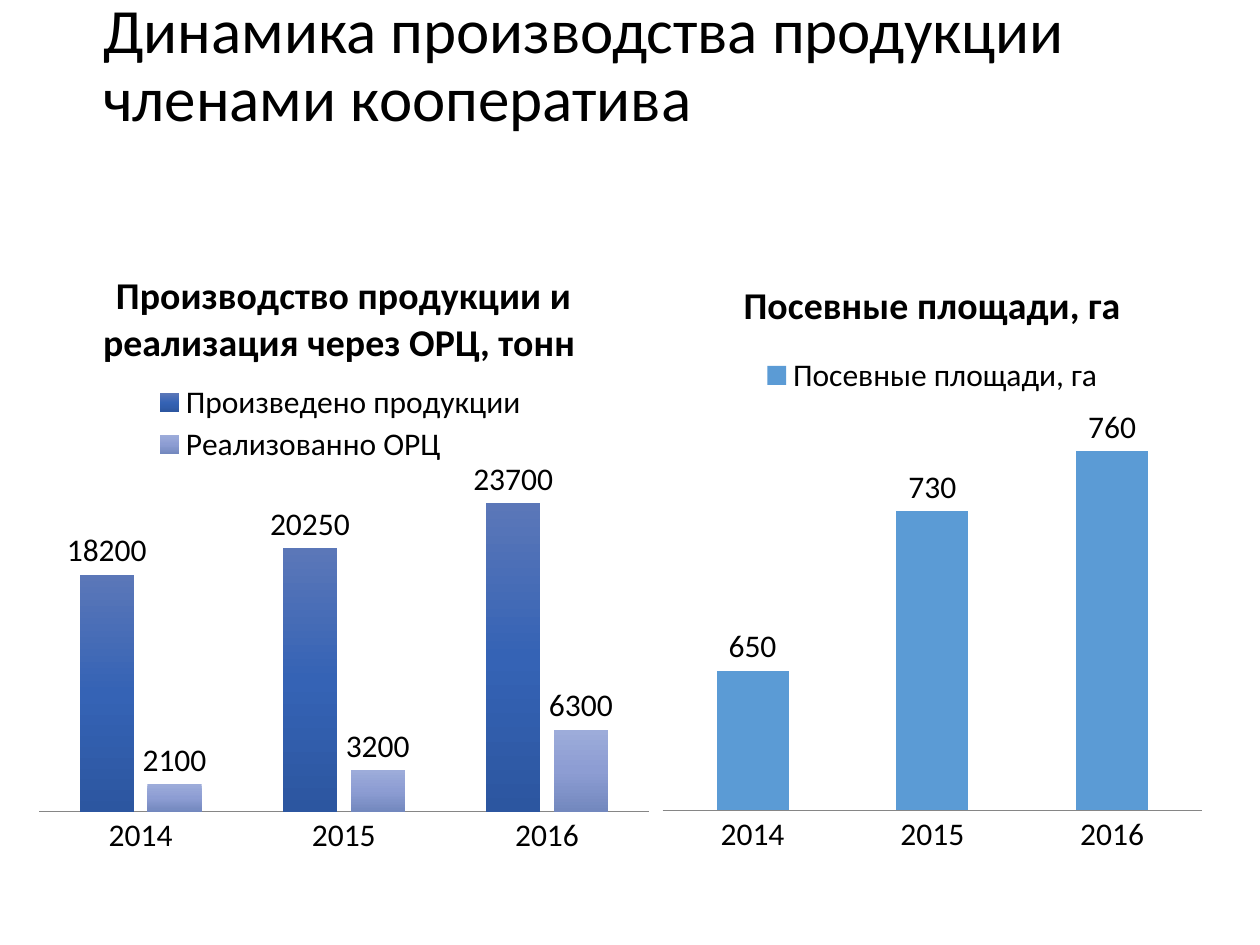
from pptx import Presentation
from pptx.chart.data import CategoryChartData
from pptx.dml.color import RGBColor
from pptx.enum.chart import XL_CHART_TYPE, XL_LABEL_POSITION, XL_LEGEND_POSITION, XL_TICK_MARK
from pptx.enum.text import MSO_ANCHOR
from pptx.oxml import parse_xml
from pptx.oxml.ns import nsdecls
from pptx.util import Inches, Pt

COLUMNS = XL_CHART_TYPE.COLUMN_CLUSTERED
LEGEND_TOP = XL_LEGEND_POSITION.TOP
OUTSIDE_END = XL_LABEL_POSITION.OUTSIDE_END
NO_TICK = XL_TICK_MARK.NONE
MIDDLE = MSO_ANCHOR.MIDDLE

# Content
FONT = "Calibri"
COLORS = {"text": "000000", "axis": "868686", "area": "5B9BD5"}
PRODUCED = ("5B77B8", "3563B5", "2C56A0")
SOLD = ("9DACDA", "8D9DD3", "7388BE")
TITLE = "Динамика производства продукции членами кооператива"
YEARS = ["2014", "2015", "2016"]
# Boxes are in inches; layouts are shares of the chart: x, y, width, height
CHARTS = [
    {
        "title": "Производство продукции и реализация через ОРЦ, тонн ",
        "box": (0.21, 1.92, 5.04, 4.97),
        "plot": (0.02, 0.39, 0.96, 0.52),
        "legend": (0.2, 0.22, 0.6, 0.14),
        "scale": (0, 25000),
        "series": [
            ("Произведено продукции ", (18200, 20250, 23700), PRODUCED),
            ("Реализованно ОРЦ", (2100, 3200, 6300), SOLD),
        ],
    },
    {
        "title": "Посевные площади, га",
        "box": (5.17, 2, 4.46, 4.87),
        "plot": (0.02, 0.26, 0.96, 0.65),
        "legend": (0.19, 0.17, 0.62, 0.06),
        "scale": (580, 780),
        "series": [("Посевные площади, га", (650, 730, 760), (COLORS["area"],))],
    },
]


def style_font(font, size, bold=False):
    font.name, font.size, font.bold = FONT, Pt(size), bold
    font.color.rgb = RGBColor.from_string(COLORS["text"])


def write_text(frame, text, size, bold=False, spacing=None):
    para = frame.paragraphs[0]
    para.line_spacing = spacing
    span = para.add_run()
    span.text = text
    style_font(span.font, size, bold)


def make_layout(shares, inner=False):
    target = '<c:layoutTarget val="inner"/>' if inner else ""
    modes = "".join(f'<c:{side}Mode val="edge"/>' for side in "xy")
    sizes = "".join(f'<c:{key} val="{share}"/>' for key, share in zip("xywh", shares))
    return parse_xml(f'<c:layout {nsdecls("c")}><c:manualLayout>{target}{modes}{sizes}'
                     "</c:manualLayout></c:layout>")


def place(element, layout, after=None):
    for old in element.findall(layout.tag):
        element.remove(old)
    if after is None:
        element.insert(0, layout)
    else:
        after.addnext(layout)


def fill_series(series, stops):
    if len(stops) == 1:
        series.format.fill.solid()
        series.format.fill.fore_color.rgb = RGBColor.from_string(stops[0])
        return
    step = 100000 // (len(stops) - 1)
    marks = "".join(f'<a:gs pos="{index * step}"><a:srgbClr val="{color}"/></a:gs>'
                    for index, color in enumerate(stops))
    properties = series.format.fill._xPr
    properties.append(parse_xml(f'<a:gradFill {nsdecls("a")}><a:gsLst>{marks}</a:gsLst>'
                                '<a:lin ang="5400000" scaled="0"/></a:gradFill>'))


def add_column_chart(page, item):
    data = CategoryChartData()
    data.categories = YEARS
    for name, values, _ in item["series"]:
        data.add_series(name, values)
    chart = page.shapes.add_chart(COLUMNS, *map(Inches, item["box"]), data).chart
    style_font(chart.font, 18)
    write_text(chart.chart_title.text_frame, item["title"], 21.6, bold=True)
    chart.chart_title.include_in_layout = False

    # Legend
    chart.has_legend = True
    legend = chart.legend
    legend.position = LEGEND_TOP
    legend.include_in_layout = False
    style_font(legend.font, 18)
    place(legend._element, make_layout(item["legend"]), legend._element.legendPos)

    # Axes
    values_axis, years_axis = chart.value_axis, chart.category_axis
    values_axis.minimum_scale, values_axis.maximum_scale = item["scale"]
    values_axis.has_major_gridlines = False
    values_axis.visible = False
    years_axis.major_tick_mark = years_axis.minor_tick_mark = NO_TICK
    years_axis.format.line.color.rgb = RGBColor.from_string(COLORS["axis"])
    years_axis.format.line.width = Pt(0.75)

    # Columns and their labels
    plot = chart.plots[0]
    plot.gap_width, plot.overlap, plot.vary_by_categories = 150, -25, False
    plot_area = plot._element.getparent()
    place(plot_area, make_layout(item["plot"], inner=True))
    for series, (_, _, stops) in zip(plot.series, item["series"]):
        series.invert_if_negative = False
        fill_series(series, stops)
        labels = series.data_labels
        labels.show_value, labels.position = True, OUTSIDE_END
        style_font(labels.font, 18)


deck = Presentation()
deck.slide_width, deck.slide_height = Inches(10), Inches(7.5)
page = deck.slides.add_slide(deck.slide_layouts[6])

for item in CHARTS:
    add_column_chart(page, item)

# Heading
box = page.shapes.add_textbox(*map(Inches, (0.72, 0, 8.57, 1.07)))
frame = box.text_frame
frame.word_wrap, frame.vertical_anchor = True, MIDDLE
write_text(frame, TITLE, 36, spacing=0.9)

deck.save("out.pptx")
